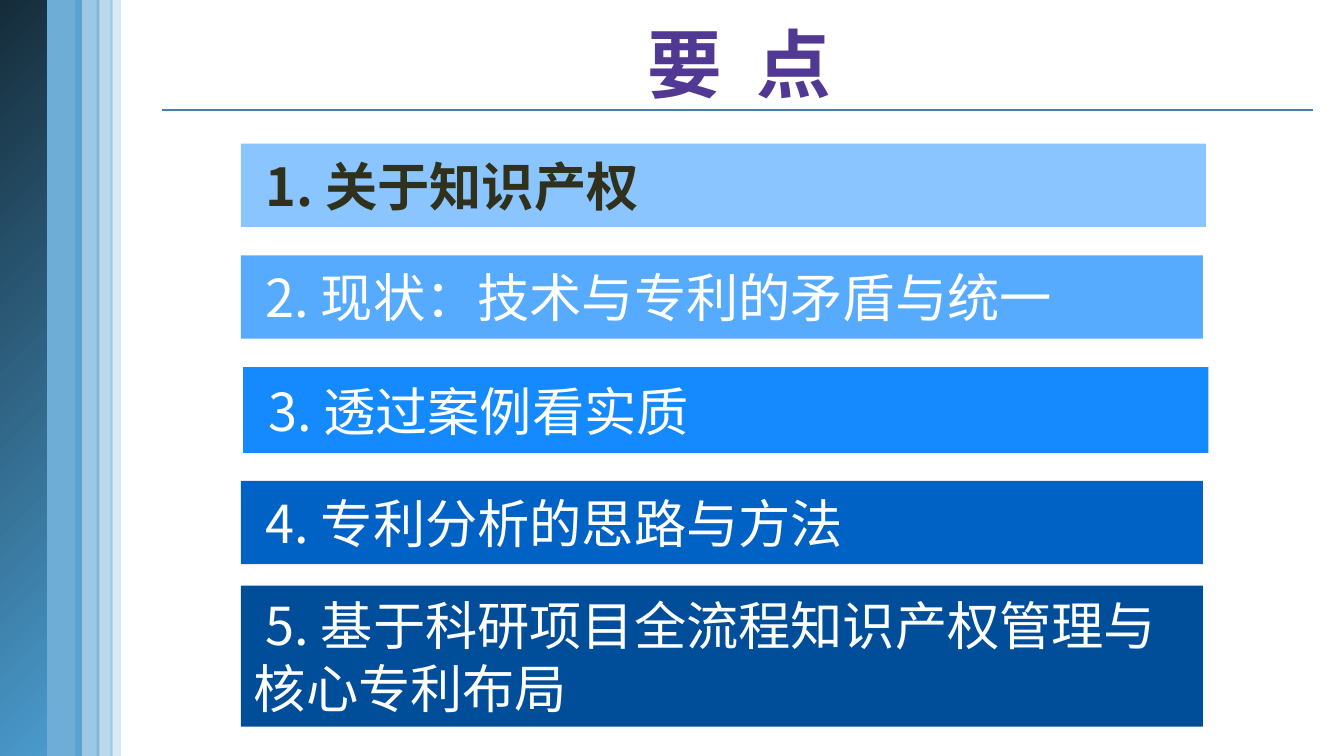
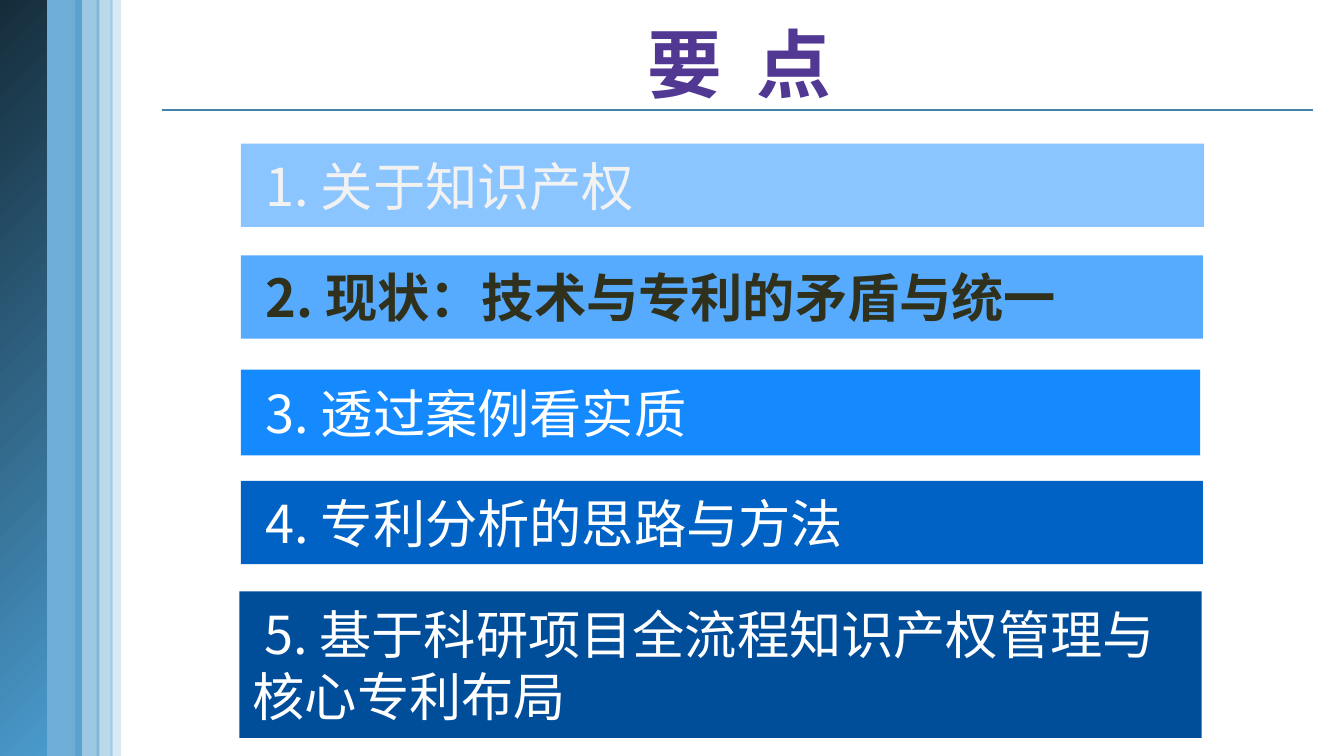
from dataclasses import dataclass, replace

from lxml import etree
from pptx import Presentation
from pptx.dml.color import RGBColor
from pptx.enum.shapes import MSO_CONNECTOR, MSO_SHAPE
from pptx.enum.text import MSO_ANCHOR, PP_ALIGN
from pptx.oxml.ns import qn
from pptx.util import Pt

RECTANGLE = MSO_SHAPE.RECTANGLE
STRAIGHT = MSO_CONNECTOR.STRAIGHT
MIDDLE = MSO_ANCHOR.MIDDLE
LEFT, CENTER = PP_ALIGN.LEFT, PP_ALIGN.CENTER

FONT = "Noto Sans CJK SC"
WHITE = RGBColor(0xFF, 0xFF, 0xFF)
PALE = RGBColor(0xF2, 0xF2, 0xF2)
OLIVE = RGBColor(0x30, 0x31, 0x1D)
PURPLE = RGBColor(0x51, 0x38, 0x93)
RULE_BLUE = RGBColor(0x45, 0x82, 0xA7)
BAND_BLUE = RGBColor(0x4A, 0x9A, 0xCC)
NIGHT_BLUE = RGBColor(0x15, 0x2C, 0x3A)
SKY_1 = RGBColor(0x8B, 0xC5, 0xFF)
SKY_2 = RGBColor(0x57, 0xAB, 0xFF)
SKY_3 = RGBColor(0x15, 0x8A, 0xFF)
SKY_4 = RGBColor(0x00, 0x62, 0xC4)
SKY_5 = RGBColor(0x00, 0x4D, 0x9A)

PAGE_WIDTH, PAGE_HEIGHT = 720, 405
FIRST_LINE_INDENT = 6.3


@dataclass(frozen=True)
class Band:
    left: float
    width: float
    opacity: int  # percent; 0 marks the gradient band


@dataclass(frozen=True)
class Topic:
    text: str
    fill: RGBColor
    top: float
    left: float = 129
    width: float = 515.5
    height: float = 44.6
    color: RGBColor = WHITE
    bold: bool = False


BANDS = [
    Band(21.6, 22.3, 80),
    Band(-0.7, 25.9, 0),
    Band(59, 5.8, 20),
    Band(40.3, 13, 54),
    Band(51.8, 8.6, 37),
]

TOPICS = [
    Topic("1. 关于知识产权", SKY_1, 77, width=517, color=PALE),
    Topic("2. 现状：技术与专利的矛盾与统一", SKY_2, 136.8),
    Topic("3. 透过案例看实质", SKY_3, 196.7, left=130.3, width=517, height=46),
    Topic("4. 专利分析的思路与方法", SKY_4, 257.6),
    Topic("5. 基于科研项目全流程知识产权管理与核心专利布局", SKY_5, 313.7, height=75.6),
]


def style_paragraph(para, size: float, color: RGBColor, bold: bool) -> None:
    font = para.font
    font.size = Pt(size)
    font.bold = bold
    font.color.rgb = color
    font.name = FONT
    # East Asian text takes its own typeface element
    latin = para._p.pPr.find(qn("a:defRPr")).find(qn("a:latin"))
    east_asian = etree.Element(qn("a:ea"), typeface=FONT)
    latin.addnext(east_asian)


def add_rectangle(page, left: float, top: float, width: float, height: float):
    box = page.shapes.add_shape(RECTANGLE, Pt(left), Pt(top), Pt(width), Pt(height))
    box.shadow.inherit = False
    box.line.fill.background()
    return box


def add_band(page, band: Band) -> None:
    box = add_rectangle(page, band.left, 0, band.width, PAGE_HEIGHT)
    if band.opacity:
        box.fill.solid()
        box.fill.fore_color.rgb = BAND_BLUE
        color = box._element.spPr.find(qn("a:solidFill")).find(qn("a:srgbClr"))
        etree.SubElement(color, qn("a:alpha"), val=str(band.opacity * 1000))
    else:
        box.fill.gradient()
        box.fill.gradient_angle = 315
        for stop, shade in zip(box.fill.gradient_stops, (NIGHT_BLUE, BAND_BLUE)):
            stop.color.rgb = shade


def add_frame(page, title: str) -> None:
    # Rule under the title
    rule = page.shapes.add_connector(STRAIGHT, Pt(86.6), Pt(59), Pt(703.5), Pt(59))
    rule.line.color.rgb = RULE_BLUE
    rule.line.width = Pt(1)
    etree.SubElement(rule._element.spPr, qn("a:effectLst"))
    # Bands on the left edge
    for band in BANDS:
        add_band(page, band)
    # Title
    box = page.shapes.add_textbox(Pt(82.8), Pt(3.6), Pt(626.4), Pt(59.8))
    box.text_frame.word_wrap = True
    box.text_frame.vertical_anchor = MIDDLE
    para = box.text_frame.paragraphs[0]
    para.text = title
    para.alignment = CENTER
    style_paragraph(para, 40, PURPLE, True)


def add_topic(page, topic: Topic) -> None:
    box = add_rectangle(page, topic.left, topic.top, topic.width, topic.height)
    box.fill.solid()
    box.fill.fore_color.rgb = topic.fill
    box.text_frame.word_wrap = True
    box.text_frame.vertical_anchor = MIDDLE
    para = box.text_frame.paragraphs[0]
    para.text = topic.text
    para.alignment = LEFT
    para._p.get_or_add_pPr().set("indent", str(Pt(FIRST_LINE_INDENT)))
    style_paragraph(para, 28, topic.color, topic.bold)


def add_agenda(deck, topics: list[Topic], current: int) -> None:
    page = deck.slides.add_slide(deck.slide_layouts[6])
    add_frame(page, "要  点")
    for number, topic in enumerate(topics, start=1):
        if number == current:
            topic = replace(topic, color=OLIVE, bold=True)
        add_topic(page, topic)


def main() -> None:
    deck = Presentation()
    deck.slide_width, deck.slide_height = Pt(PAGE_WIDTH), Pt(PAGE_HEIGHT)
    add_agenda(deck, TOPICS, current=1)

    # The second agenda sets three bars slightly differently
    first, second, third, fourth, fifth = TOPICS
    adjusted = [
        replace(first, width=516),
        second,
        replace(third, left=129, top=198, width=514),
        fourth,
        replace(fifth, left=128.3, top=316.8, height=78.5),
    ]
    add_agenda(deck, adjusted, current=2)
    deck.save("out.pptx")


if __name__ == "__main__":
    main()
